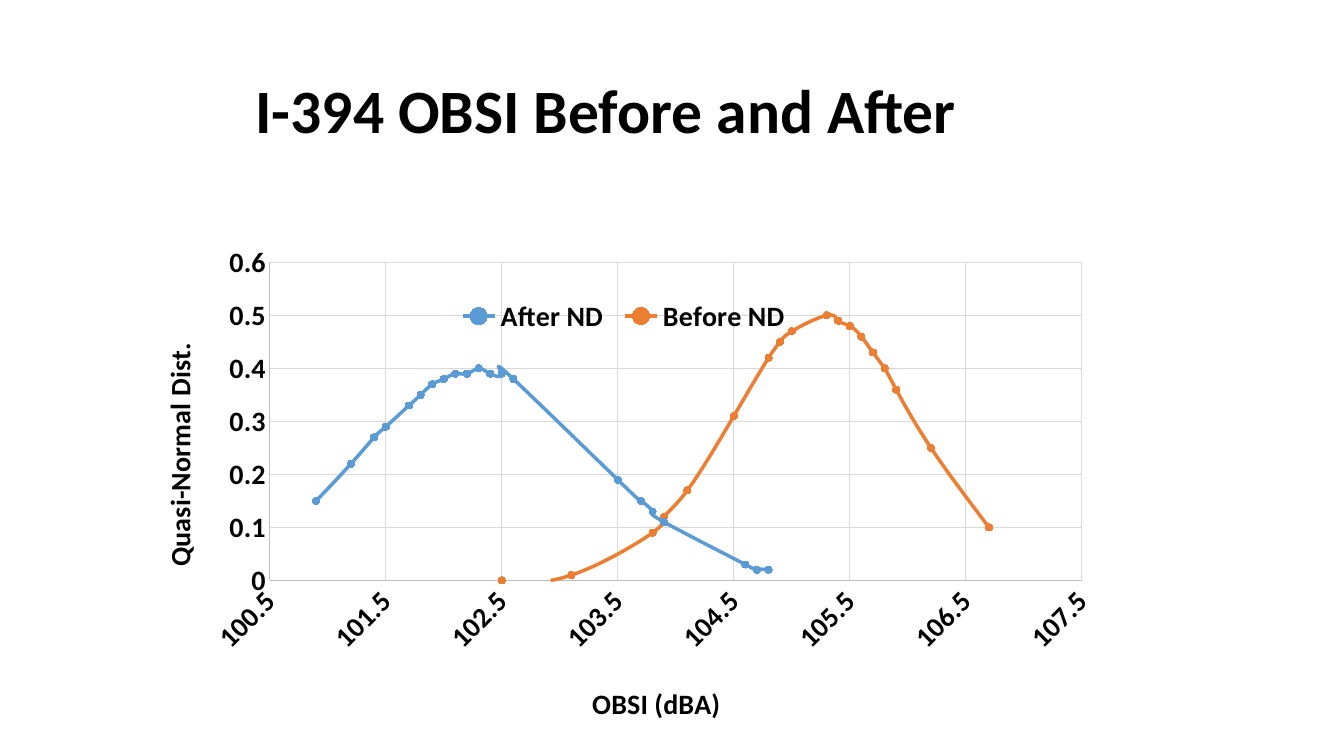
from itertools import chain, repeat

from lxml.etree import SubElement
from pptx import Presentation
from pptx.chart.data import XyChartData
from pptx.dml.color import RGBColor
from pptx.enum.chart import (XL_CHART_TYPE, XL_LEGEND_POSITION, XL_MARKER_STYLE,
                             XL_TICK_MARK)
from pptx.enum.text import MSO_ANCHOR
from pptx.oxml import parse_xml
from pptx.oxml.ns import nsdecls, qn
from pptx.util import Cm, Pt

COLORS = {
    "text": "000000", "axis": "BFBFBF", "grid": "D9D9D9",
    "after": "5B9BD5", "after_marker": "44546A",
    "before": "ED7D31", "before_marker": "385723",
}

AFTER_ND = [
    (100.9, 0.15, 1), (101.2, 0.22, 3), (101.4, 0.27, 2), (101.5, 0.29, 6),
    (101.7, 0.33, 1), (101.8, 0.35, 6), (101.9, 0.37, 1), (102.0, 0.38, 1),
    (102.1, 0.39, 1), (102.2, 0.39, 2), (102.3, 0.4, 3), (102.4, 0.39, 1),
    (102.5, 0.39, 2), (102.6, 0.38, 4), (103.5, 0.19, 1), (103.7, 0.15, 1),
    (103.8, 0.13, 2), (103.9, 0.11, 1), (104.6, 0.03, 1), (104.7, 0.02, 1),
    (104.8, 0.02, 1),
]
BEFORE_ND = [
    (102.5, 0, 1), (103.1, 0.01, 1), (103.8, 0.09, 1), (103.9, 0.12, 1),
    (104.1, 0.17, 1), (104.5, 0.31, 1), (104.8, 0.42, 1), (104.9, 0.45, 3),
    (105.0, 0.47, 2), (105.3, 0.5, 4), (105.4, 0.49, 4), (105.5, 0.48, 4),
    (105.6, 0.46, 3), (105.7, 0.43, 5), (105.8, 0.4, 3), (105.9, 0.36, 5),
    (106.2, 0.25, 1), (106.7, 0.1, 1),
]


def write(frame, text, size=20, bold=True, color="text", spacing=None):
    paragraph = frame.paragraphs[0]
    paragraph.line_spacing = spacing
    run = paragraph.add_run()
    run.text = text
    SlideBuilder.style_font(run.font, size, bold, color)


class SlideBuilder:
    """Hold the deck style and the current slide."""

    FONT = "Calibri"

    def __init__(self, deck):
        self.slide = deck.slides.add_slide(deck.slide_layouts[6])

    @classmethod
    def style_font(cls, font, size=20, bold=True, color="text"):
        font.name = cls.FONT
        font.size = Pt(size)
        font.bold = bold
        font.color.rgb = RGBColor.from_string(COLORS[color])

    @staticmethod
    def style_line(line, color, width):
        line.color.rgb = RGBColor.from_string(COLORS[color])
        line.width = Pt(width)

    @staticmethod
    def place(element, index, **fractions):
        for old in element.findall(qn("c:layout")):
            element.remove(old)
        layout = parse_xml(f"<c:layout {nsdecls('c')}><c:manualLayout/></c:layout>")
        manual = layout[0]
        if "h" in fractions and index == 0:
            SubElement(manual, qn("c:layoutTarget")).set("val", "inner")
        for side in "xy":
            SubElement(manual, qn(f"c:{side}Mode")).set("val", "edge")
        for key, value in fractions.items():
            SubElement(manual, qn(f"c:{key}")).set("val", str(value))
        element.insert(index, layout)

    def title(self, text, left, top, width, height, indent):
        frame = self.slide.shapes.add_textbox(left, top, width, height).text_frame
        frame.word_wrap = True
        frame.vertical_anchor = MSO_ANCHOR.MIDDLE
        frame.margin_left = indent
        write(frame, text, size=44, spacing=0.9)

    def scatter(self, series, left, top, width, height):
        data = XyChartData()
        for name, points, _ in series:
            plotted = data.add_series(name)
            for x, y in chain.from_iterable(repeat((x, y), n) for x, y, n in points):
                plotted.add_data_point(x, y)
        chart = self.slide.shapes.add_chart(
            XL_CHART_TYPE.XY_SCATTER_SMOOTH, left, top, width, height, data).chart
        chart.has_title = False
        self.style_font(chart.font)
        chart.plots[0].vary_by_categories = False
        for curve, (_, _, color) in zip(chart.plots[0].series, series):
            self.style_line(curve.format.line, color, 2.5)
            curve._element.get_or_add_smooth().val = True
            curve.marker.style = XL_MARKER_STYLE.CIRCLE
            curve.marker.size = 5
            curve.marker.format.fill.solid()
            curve.marker.format.fill.fore_color.rgb = RGBColor.from_string(
                COLORS[f"{color}_marker"])
            self.style_line(curve.marker.format.line, color, 0.75)
        self.place(chart._chartSpace.chart.plotArea, 0, x=0.148, y=0.148, w=0.819, h=0.575)
        return chart

    def axis(self, axis, name, low, high, step, x, y, title_turn=0, label_turn=0):
        axis.minimum_scale, axis.maximum_scale, axis.major_unit = low, high, step
        axis.major_tick_mark = axis.minor_tick_mark = XL_TICK_MARK.NONE
        axis.has_major_gridlines = True
        self.style_line(axis.major_gridlines.format.line, "grid", 0.75)
        self.style_line(axis.format.line, "axis", 0.75)
        self.style_font(axis.tick_labels.font)
        axis.tick_labels.number_format = "General"
        axis.tick_labels.number_format_is_linked = False
        axis._element.txPr.bodyPr.set("rot", str(label_turn * 60000))
        frame = axis.axis_title.text_frame
        write(frame, name)
        frame._txBody.bodyPr.set("rot", str(title_turn * 60000))
        self.place(axis.axis_title._element, 1, x=x, y=y)

    def legend(self, chart):
        chart.has_legend = True
        chart.legend.position = XL_LEGEND_POSITION.TOP
        chart.legend.include_in_layout = True
        self.style_font(chart.legend.font)
        self.place(chart.legend._element, 1, x=0.33, y=0.205, w=0.35, h=0.08)


def main():
    deck = Presentation()
    deck.slide_width, deck.slide_height = Cm(33.87), Cm(19.05)
    builder = SlideBuilder(deck)
    builder.title("I-394 OBSI Before and After",
                  Cm(2.33), Cm(1.01), Cm(29.21), Cm(3.68), indent=Cm(4.11))
    noise = builder.scatter(
        [("After ND", AFTER_ND, "after"), ("Before ND", BEFORE_ND, "before")],
        Cm(3.1), Cm(4.55), Cm(24.99), Cm(13.94))
    builder.axis(noise.category_axis, "OBSI (dBA)", 100.5, 107.5, 1,
                 x=0.468, y=0.9, label_turn=-45)
    builder.axis(noise.value_axis, "Quasi-Normal Dist.", 0, 0.6, 0.1,
                 x=0.032, y=0.285, title_turn=-90)
    builder.legend(noise)
    deck.save("out.pptx")


if __name__ == "__main__":
    main()
